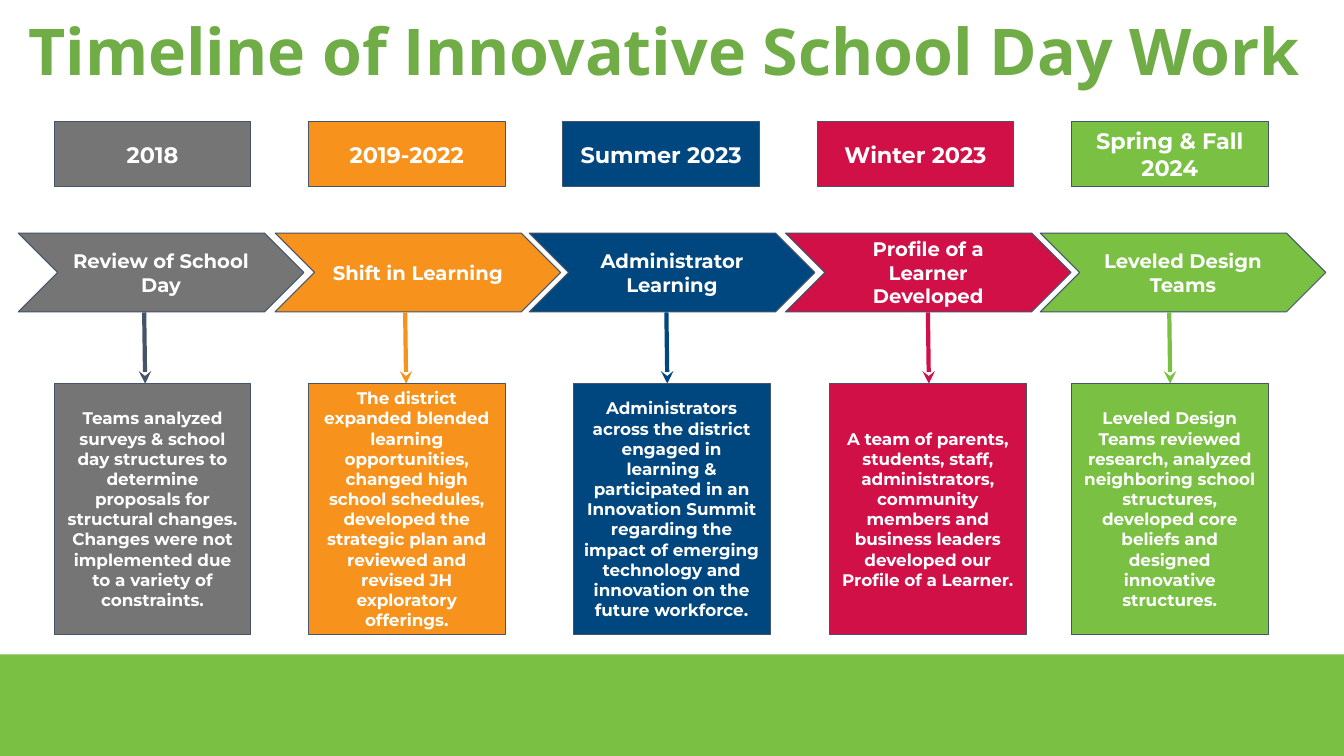
"""Build the slide with the timeline of innovative school day work."""
from dataclasses import dataclass

import pptx
import pptx.dml.color
import pptx.enum.shapes
import pptx.enum.text
import pptx.oxml
import pptx.oxml.ns
import pptx.util

Pt = pptx.util.Pt
SHAPES = pptx.enum.shapes.MSO_SHAPE


@dataclass(frozen=True)
class Theme:
    title_font: str = "Open Sans"
    body_font: str = "Montserrat"
    title_size: float = 46
    date_size: float = 16
    phase_size: float = 14
    detail_size: float = 12
    title_color: str = "70AD47"
    text_color: str = "FFFFFF"
    outline: str = "44546A"
    gray: str = "757575"
    orange: str = "F7931D"
    blue: str = "004780"
    red: str = "D11048"
    green: str = "79C043"


def rgb(color):
    return pptx.dml.color.RGBColor.from_string(color)


class TimelineSlide:
    def __init__(self, slide, theme):
        self.slide = slide
        self.theme = theme

    def format_font(self, paragraph, name, size, color):
        font = paragraph.font
        font.name = name
        font.size = Pt(size)
        font.bold = True
        font.color.rgb = rgb(color)

    def title(self, text, left, top, width, height):
        shape = self.slide.shapes.title
        shape.left, shape.top = Pt(left), Pt(top)
        shape.width, shape.height = Pt(width), Pt(height)
        frame = shape.text_frame
        frame.text = text
        frame.word_wrap = True
        frame.auto_size = pptx.enum.text.MSO_AUTO_SIZE.NONE
        frame.vertical_anchor = pptx.enum.text.MSO_ANCHOR.TOP
        paragraph = frame.paragraphs[0]
        paragraph.alignment = pptx.enum.text.PP_ALIGN.LEFT
        paragraph.line_spacing = 0.9
        theme = self.theme
        self.format_font(paragraph, theme.title_font, theme.title_size, theme.title_color)

    def block(self, kind, left, top, width, height, fill):
        shape = self.slide.shapes.add_shape(kind, Pt(left), Pt(top), Pt(width), Pt(height))
        shape.shadow.inherit = False
        shape.fill.solid()
        shape.fill.fore_color.rgb = rgb(fill)
        shape.line.fill.background()
        return shape

    def label(self, kind, text, left, top, width, height, fill, size):
        shape = self.block(kind, left, top, width, height, fill)
        shape.line.color.rgb = rgb(self.theme.outline)
        shape.line.width = Pt(0.75)
        frame = shape.text_frame
        frame.text = text
        frame.word_wrap = True
        frame.vertical_anchor = pptx.enum.text.MSO_ANCHOR.MIDDLE
        frame.margin_left = frame.margin_right = Pt(7.2)
        frame.margin_top = frame.margin_bottom = Pt(7.2)
        paragraph = frame.paragraphs[0]
        paragraph.alignment = pptx.enum.text.PP_ALIGN.CENTER
        self.format_font(paragraph, self.theme.body_font, size, self.theme.text_color)

    def arrow(self, left, top, bottom, color):
        connector = self.slide.shapes.add_connector(
            pptx.enum.shapes.MSO_CONNECTOR.STRAIGHT,
            Pt(left), Pt(top), Pt(left + 0.7), Pt(bottom))
        connector.line.color.rgb = rgb(color)
        connector.line.width = Pt(3)
        namespace = pptx.oxml.ns.nsdecls("a")
        line = connector.line._get_or_add_ln()
        line.append(pptx.oxml.parse_xml(f'<a:tailEnd {namespace} type="stealth"/>'))
        properties = connector._element.spPr
        properties.append(pptx.oxml.parse_xml(f"<a:effectLst {namespace}/>"))


def main():
    theme = Theme()
    presentation = pptx.Presentation()
    presentation.slide_width, presentation.slide_height = Pt(960), Pt(540)
    slide = presentation.slides.add_slide(presentation.slide_layouts[5])
    timeline = TimelineSlide(slide, theme)
    timeline.block(SHAPES.RECTANGLE, 0, 467.5, 960, 72.5, theme.green)
    timeline.title("Timeline of Innovative School Day Work", 13, 10.8, 934, 104.4)

    stages = [
        ("2018", "Review of School Day",
         "Teams analyzed surveys & school day structures to determine proposals for "
         "structural changes. Changes were not implemented due to a variety of constraints.",
         theme.gray, theme.outline, 13, 103, 38.7),
        ("2019-2022", "Shift in Learning",
         "The district expanded blended learning opportunities, changed high school "
         "schedules, developed the strategic plan and reviewed and revised JH "
         "exploratory offerings.",
         theme.orange, theme.orange, 196.5, 289.4, 220.3),
        ("Summer 2023", "Administrator Learning",
         "Administrators across the district engaged in learning & participated in an "
         "Innovation Summit regarding the impact of emerging technology and innovation "
         "on the future workforce.",
         theme.blue, theme.blue, 378, 476, 409.5),
        ("Winter 2023", "Profile of a Learner Developed",
         "A team of parents, students, staff, administrators, community members and "
         "business leaders developed our Profile of a Learner.",
         theme.red, theme.red, 561, 662.8, 592.5),
        ("Spring & Fall 2024", "Leveled Design Teams",
         "Leveled Design Teams reviewed research, analyzed neighboring school "
         "structures, developed core beliefs and designed innovative structures.",
         theme.green, theme.green, 743, 835.2, 765.3),
    ]
    for index, stage in enumerate(stages):
        date, phase, detail, fill, arrow_color, phase_left, arrow_left, detail_left = stage
        date_left = 38.7 + 181.65 * index
        timeline.label(SHAPES.RECTANGLE, date, date_left, 87, 140.6, 46.2,
                       fill, theme.date_size)
        timeline.label(SHAPES.CHEVRON, phase, phase_left, 166.5, 204, 56.3,
                       fill, theme.phase_size)
        timeline.arrow(arrow_left, 223.2, 274, arrow_color)
        timeline.label(SHAPES.RECTANGLE, detail, detail_left, 274, 140.6, 179.2,
                       fill, theme.detail_size)

    presentation.save("out.pptx")


if __name__ == "__main__":
    main()
